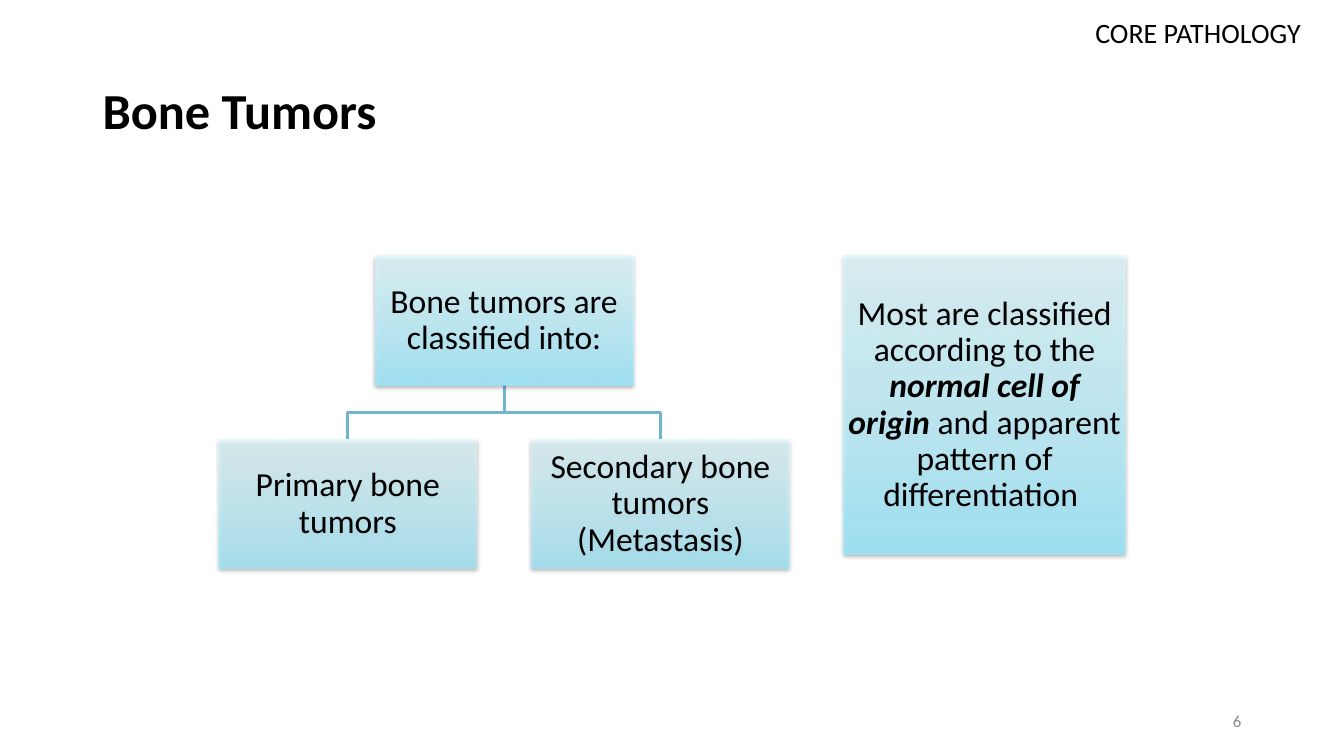
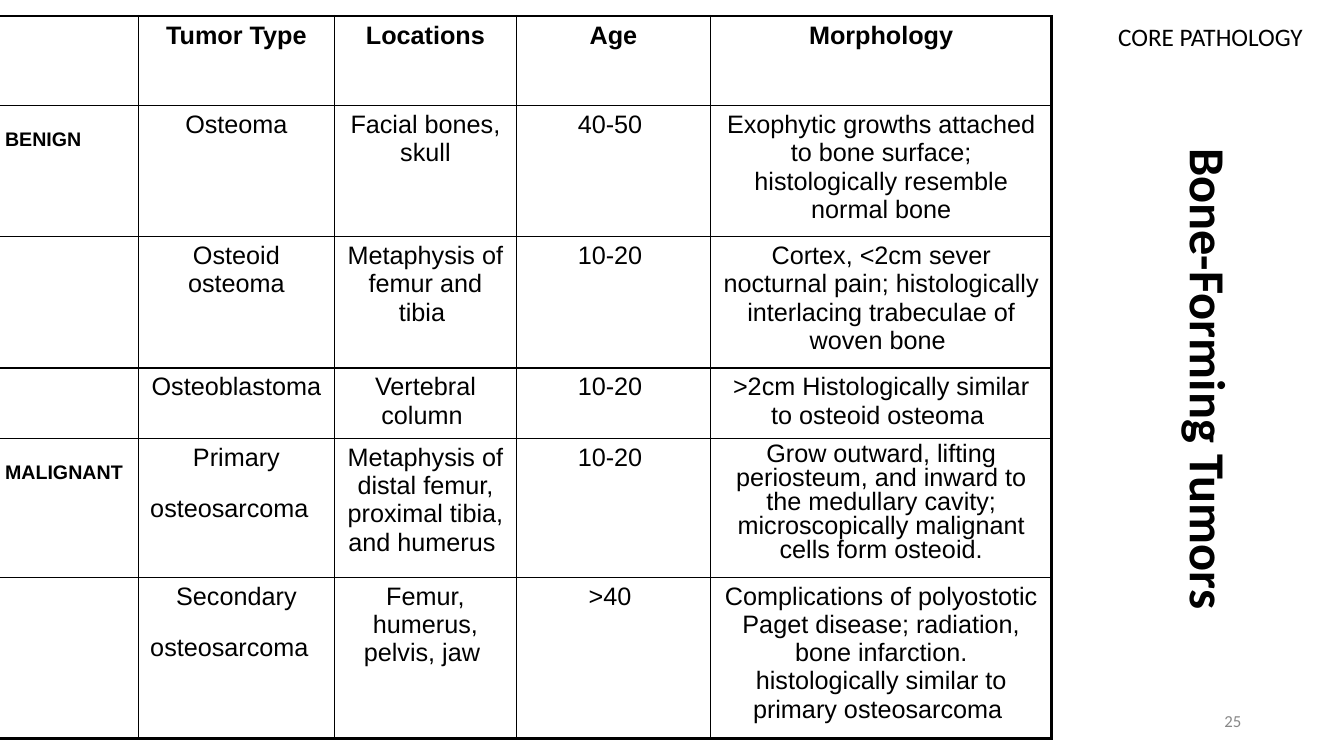
from pptx import Presentation
from pptx.dml.color import RGBColor
from pptx.enum.shapes import MSO_SHAPE as Shape
from pptx.enum.text import MSO_ANCHOR as Anchor, PP_ALIGN as Align
from pptx.oxml import parse_xml
from pptx.oxml.ns import nsdecls
from pptx.util import Inches, Pt

COLORS = {
    "text": "000000",
    "page_number": "888888",
    "branch": "6FB6CD",
    "box_bottom": "99EAFF",
    "box_middle": "B8F1FF",
    "box_top": "E2FBFF",
}
NAMESPACE = nsdecls("a")


def write(frame, text, size, font="Calibri", color="text", bold=False, align=Align.LEFT,
          anchor=Anchor.TOP, spacing=None, margins=(0.1, 0.05)):
    """Fill a text frame; text is a string or a list of (text, run format) pairs."""
    frame.word_wrap = True
    frame.vertical_anchor = anchor
    frame.margin_left = frame.margin_right = Inches(margins[0])
    frame.margin_top = frame.margin_bottom = Inches(margins[1])
    paragraph = frame.paragraphs[0]
    paragraph.alignment = align
    paragraph.line_spacing = spacing
    for words, changes in [(text, {})] if isinstance(text, str) else text:
        run = paragraph.add_run()
        run.text = words
        run.font.name = font
        run.font.size = Pt(changes.get("size", size))
        run.font.bold = changes.get("bold", bold)
        run.font.italic = changes.get("italic", False)
        run.font.color.rgb = RGBColor.from_string(COLORS[color])


def add_text(slide, place, text, size, rotation=0, **text_format):
    box = slide.shapes.add_textbox(*map(Inches, place))
    box.rotation = rotation
    write(box.text_frame, text, size, **text_format)


presentation = Presentation()
presentation.slide_width = Inches(13.33)
presentation.slide_height = Inches(7.5)

# What the slides share: title, page number and running header
slide_settings = [
    {"title": "Bone Tumors", "title_place": (0.92, 0.4, 11.5, 1.45), "rotation": 0,
     "spacing": 0.9, "number": "6", "header_place": (9.53, 0.05, 3.47, 0.45),
     "header_size": 20, "header_margins": (0.1, 0.1)},
    {"title": "Bone-Forming Tumors", "title_place": (9.25, 3.44, 5.59, 1.45), "rotation": 90,
     "spacing": 1.15, "number": "25", "header_place": (10.15, 0.16, 2.87, 0.4),
     "header_size": 18, "header_margins": (0.1, 0.05)},
]
slides = []
for settings in slide_settings:
    slide = presentation.slides.add_slide(presentation.slide_layouts[6])
    add_text(slide, settings["title_place"], settings["title"], 36, settings["rotation"],
             bold=True, anchor=Anchor.MIDDLE, spacing=settings["spacing"])
    add_text(slide, (9.41, 6.95, 3, 0.4), settings["number"], 12, color="page_number",
             align=Align.RIGHT, anchor=Anchor.MIDDLE)
    add_text(slide, settings["header_place"], "CORE PATHOLOGY", settings["header_size"],
             align=Align.RIGHT, margins=settings["header_margins"])
    slides.append(slide)
tree_slide, table_slide = slides

# Slide 1: classification tree and remark
BOX_WIDTH, BOX_HEIGHT = 2.56, 1.28
ROOT_CENTER, ROOT_TOP = 5, 2.54
CHILD_OFFSET, CHILD_TOP = 1.55, 4.36
root_bottom = ROOT_TOP + BOX_HEIGHT
branch_middle = (root_bottom + CHILD_TOP) / 2

for child_center in (ROOT_CENTER + CHILD_OFFSET, ROOT_CENTER - CHILD_OFFSET):
    builder = tree_slide.shapes.build_freeform(Inches(ROOT_CENTER), Inches(root_bottom))
    corners = [(ROOT_CENTER, branch_middle), (child_center, branch_middle),
               (child_center, CHILD_TOP)]
    builder.add_line_segments([(Inches(x), Inches(y)) for x, y in corners], close=False)
    branch = builder.convert_to_shape()
    branch.shadow.inherit = False
    branch.fill.background()
    branch.line.color.rgb = RGBColor.from_string(COLORS["branch"])
    branch.line.width = Pt(2)

root_left = ROOT_CENTER - BOX_WIDTH / 2
remark = [
    ("Most are classified according to the ", {}),
    ("normal cell of origin", {"bold": True, "italic": True}),
    (" and apparent pattern of differentiation ", {}),
]
boxes = [
    (root_left, ROOT_TOP, BOX_WIDTH, BOX_HEIGHT, 80, "Bone tumors are classified into:"),
    (root_left - CHILD_OFFSET, CHILD_TOP, BOX_WIDTH, BOX_HEIGHT, 70, "Primary bone tumors"),
    (root_left + CHILD_OFFSET, CHILD_TOP, BOX_WIDTH, BOX_HEIGHT, 70,
     "Secondary bone tumors (Metastasis)"),
    (8.37, ROOT_TOP, 2.79, 2.96, 80, remark),
]
for left, top, width, height, opacity, text in boxes:
    box = tree_slide.shapes.add_shape(
        Shape.RECTANGLE, Inches(left), Inches(top), Inches(width), Inches(height))
    stops = "".join(
        f'<a:gs pos="{position * 1000}"><a:srgbClr val="{COLORS[name]}">'
        f'<a:alpha val="{opacity * 1000}"/></a:srgbClr></a:gs>'
        for position, name in ((0, "box_bottom"), (35, "box_middle"), (100, "box_top")))
    properties = box.element.spPr
    properties.insert(2, parse_xml(
        f'<a:gradFill {NAMESPACE} rotWithShape="1"><a:gsLst>{stops}</a:gsLst>'
        '<a:lin ang="16200000" scaled="0"/></a:gradFill>'))
    box.line.fill.background()
    box.shadow.inherit = False
    properties.find("{*}effectLst").append(parse_xml(
        f'<a:outerShdw {NAMESPACE} blurRad="{Pt(3.1)}" dist="{Pt(1.6)}" dir="5400000" '
        f'rotWithShape="0"><a:srgbClr val="{COLORS["text"]}"><a:alpha val="38000"/>'
        '</a:srgbClr></a:outerShdw>'))
    write(box.text_frame, text, 24, align=Align.CENTER, anchor=Anchor.MIDDLE, spacing=0.9,
          margins=(0.02, 0.02))

# Slide 2: table of bone-forming tumors
wide_space = (" ", {"size": 36})
group_space = (" ", {"size": 28})
rows = [
    ["", "Tumor Type", "Locations", "Age", "Morphology"],
    [[("BENIGN", {}), group_space], "Osteoma", "Facial bones, skull", "40-50 ",
     "Exophytic growths attached to bone surface; histologically resemble normal bone"],
    ["", "Osteoid osteoma", "Metaphysis of femur and tibia ", "10-20 ",
     "Cortex, <2cm sever nocturnal pain; histologically interlacing trabeculae of woven bone "],
    ["", "Osteoblastoma ", "Vertebral column ", "10-20 ",
     ">2cm Histologically similar to osteoid osteoma "],
    [[("MALIGNANT", {}), group_space], [("Primary osteosarcoma", {}), wide_space],
     "Metaphysis of distal femur, proximal tibia, and humerus ", "10-20 ",
     "Grow outward, lifting periosteum, and inward to the medullary cavity; "
     "microscopically malignant cells form osteoid."],
    ["", [("Secondary osteosarcoma", {}), wide_space], "Femur, humerus, pelvis, jaw ", ">40 ",
     "Complications of polyostotic Paget disease; radiation, bone infarction. "
     "histologically similar to primary osteosarcoma "],
]
column_widths = [1.42, 1.95, 1.8, 1.93, 3.38]
row_heights = [0.89, 0.9, 1.1, 0.7, 1.29, 1.22]
last_row, last_column = len(rows) - 1, len(column_widths) - 1
TIGHT_CELL = (4, last_column)

table_frame = table_slide.shapes.add_table(
    len(rows), len(column_widths), Inches(-0.05), Inches(0.16),
    Inches(sum(column_widths)), Inches(sum(row_heights)))
table = table_frame.table
table.first_row = table.horz_banding = False
for column, width in zip(table.columns, column_widths):
    column.width = Inches(width)
for row, height in zip(table.rows, row_heights):
    row.height = Inches(height)
table_frame.height = Inches(7.23)

for row_index, row_texts in enumerate(rows):
    for column_index, text in enumerate(row_texts):
        cell = table.cell(row_index, column_index)
        is_group = column_index == 0
        write(cell.text_frame, text, 14 if is_group else 18, font="Arial",
              bold=is_group or row_index == 0,
              align=Align.LEFT if is_group else Align.CENTER,
              spacing=0.85 if (row_index, column_index) == TIGHT_CELL else None)
        cell.fill.background()
        outer_sides = {"L": column_index == 0, "R": column_index == last_column,
                       "T": row_index == 0, "B": row_index == last_row}
        cell_properties = cell._tc.get_or_add_tcPr()
        for position, (side, is_outer) in enumerate(outer_sides.items()):
            cell_properties.insert(position, parse_xml(
                f'<a:ln{side} {NAMESPACE} w="{Pt(2.25 if is_outer else 1)}"><a:solidFill>'
                f'<a:srgbClr val="{COLORS["text"]}"/></a:solidFill></a:ln{side}>'))

presentation.save("out.pptx")
